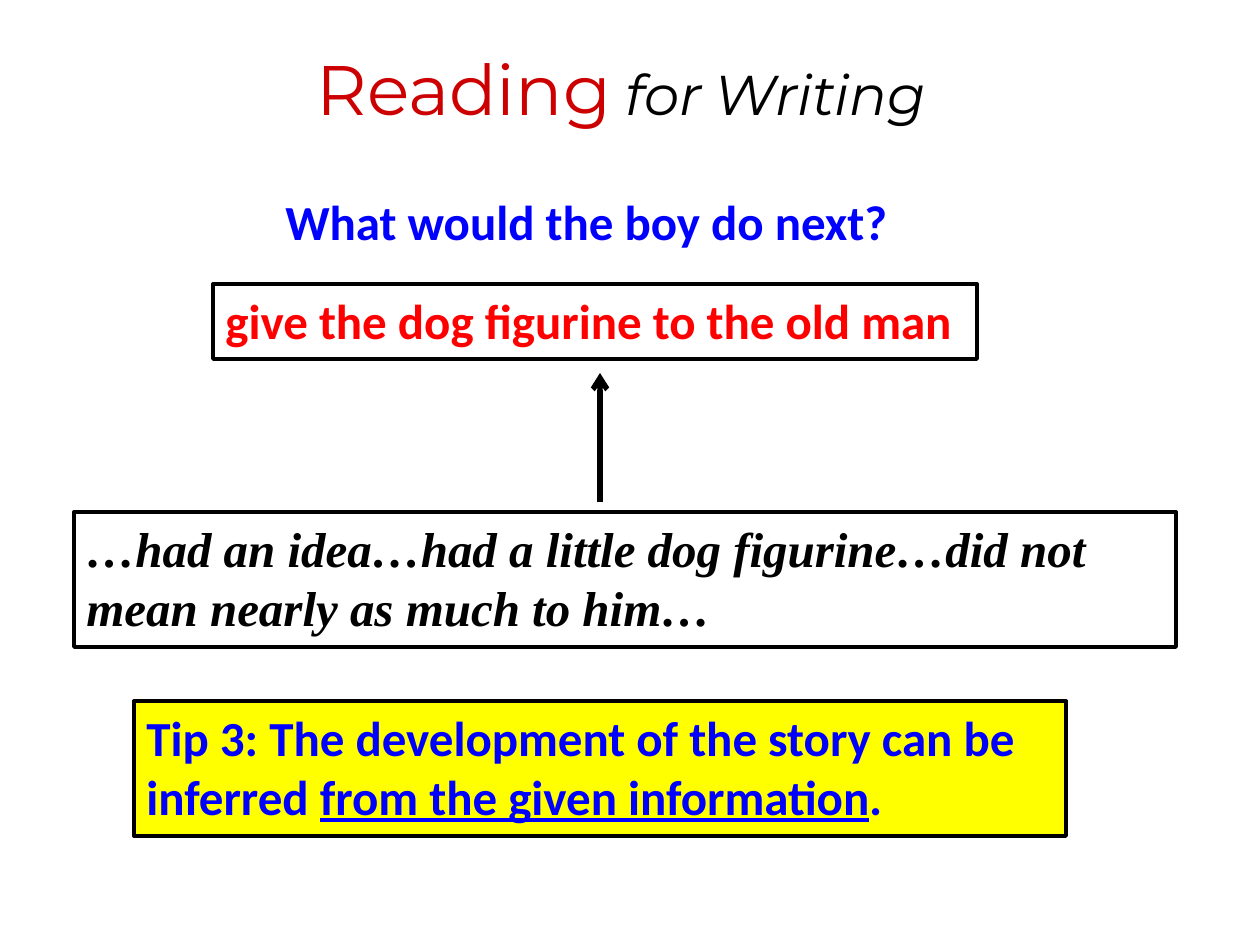
from lxml import etree
from pptx import Presentation
from pptx.dml.color import RGBColor
from pptx.enum.shapes import MSO_CONNECTOR, MSO_SHAPE
from pptx.enum.text import MSO_ANCHOR, MSO_AUTO_SIZE, PP_ALIGN
from pptx.oxml.ns import qn
from pptx.util import Inches, Pt

RECTANGLE = MSO_SHAPE.RECTANGLE
STRAIGHT = MSO_CONNECTOR.STRAIGHT
TOP = MSO_ANCHOR.TOP
LEFT = PP_ALIGN.LEFT
NO_AUTOFIT = MSO_AUTO_SIZE.NONE

THEME = {
    "black": RGBColor(0, 0, 0),
    "crimson": RGBColor(0xCC, 0, 0),
    "red": RGBColor(0xFF, 0, 0),
    "blue": RGBColor(0, 0, 0xFF),
    "yellow": RGBColor(0xFF, 0xFF, 0),
    "title_large": Pt(40),
    "title_small": Pt(32),
    "body": Pt(28),
    "border": Pt(2.25),
    "arrow": Pt(3),
    "title_font": "Montserrat",
    "body_font": "Calibri",
    "quote_font": "Times New Roman",
}


def px(*lengths):
    """Turn pixel lengths (126 to the inch) into EMU."""
    return [round(length * Inches(1) / 126) for length in lengths]


def write_spans(box, spans, font, color, bold):
    """Fill a box with one left-aligned paragraph; each span is (text, font overrides)."""
    frame = box.text_frame
    frame.word_wrap = True
    frame.auto_size = NO_AUTOFIT
    frame.vertical_anchor = TOP
    para = frame.paragraphs[0]
    para.alignment = LEFT
    for text, style in spans:
        span = para.add_run()
        span.text = text
        span.font.name = font
        span.font.size = style.get("size", THEME["body"])
        span.font.color.rgb = style.get("color", color)
        span.font.bold = bold
        span.font.italic = style.get("italic", False)
        span.font.underline = style.get("underline", False)


deck = Presentation()
deck.slide_width, deck.slide_height = px(1260, 945)
page = deck.slides.add_slide(deck.slide_layouts[5])

title = page.shapes.title
title.left, title.top, title.width, title.height = px(304, 39, 673, 97)
small = {"size": THEME["title_small"]}
small_italic = {**small, "italic": True}
title_spans = [
    ("Reading", {"size": THEME["title_large"], "color": THEME["crimson"]}),
    (" ", small),
    ("for", small_italic),
    (" ", {"italic": True}),
    ("Writing", small_italic),
]
write_spans(title, title_spans, THEME["title_font"], THEME["black"], False)

question = page.shapes.add_textbox(*px(273, 185, 735, 72))
write_spans(question, [("What would the boy do next?", {})],
            THEME["body_font"], THEME["blue"], True)

quote = "…had an idea…had a little dog figurine…did not mean nearly as much to him…"
tip_spans = [
    ("Tip 3: The development of the story can be inferred ", {}),
    ("from the given information", {"underline": True}),
    (".", {}),
]
framed_boxes = [
    ((74, 512, 1102, 135), None, [(quote, {"italic": True})],
     THEME["quote_font"], THEME["black"]),
    ((213, 284, 764, 75), None, [("give the dog figurine to the old man", {})],
     THEME["body_font"], THEME["red"]),
    ((134, 701, 932, 135), THEME["yellow"], tip_spans,
     THEME["body_font"], THEME["blue"]),
]
for bounds, fill, spans, font, color in framed_boxes:
    box = page.shapes.add_shape(RECTANGLE, *px(*bounds))
    box.shadow.inherit = False
    if fill is None:
        box.fill.background()
    else:
        box.fill.solid()
        box.fill.fore_color.rgb = fill
    box.line.color.rgb = THEME["black"]
    box.line.width = THEME["border"]
    write_spans(box, spans, font, color, True)

arrow = page.shapes.add_connector(STRAIGHT, *px(600, 502, 600, 373))
arrow.line.color.rgb = THEME["black"]
arrow.line.width = THEME["arrow"]
properties = arrow.element.spPr
etree.SubElement(properties.find(qn("a:ln")), qn("a:tailEnd"), type="arrow")
etree.SubElement(properties, qn("a:effectLst"))

deck.save("out.pptx")
